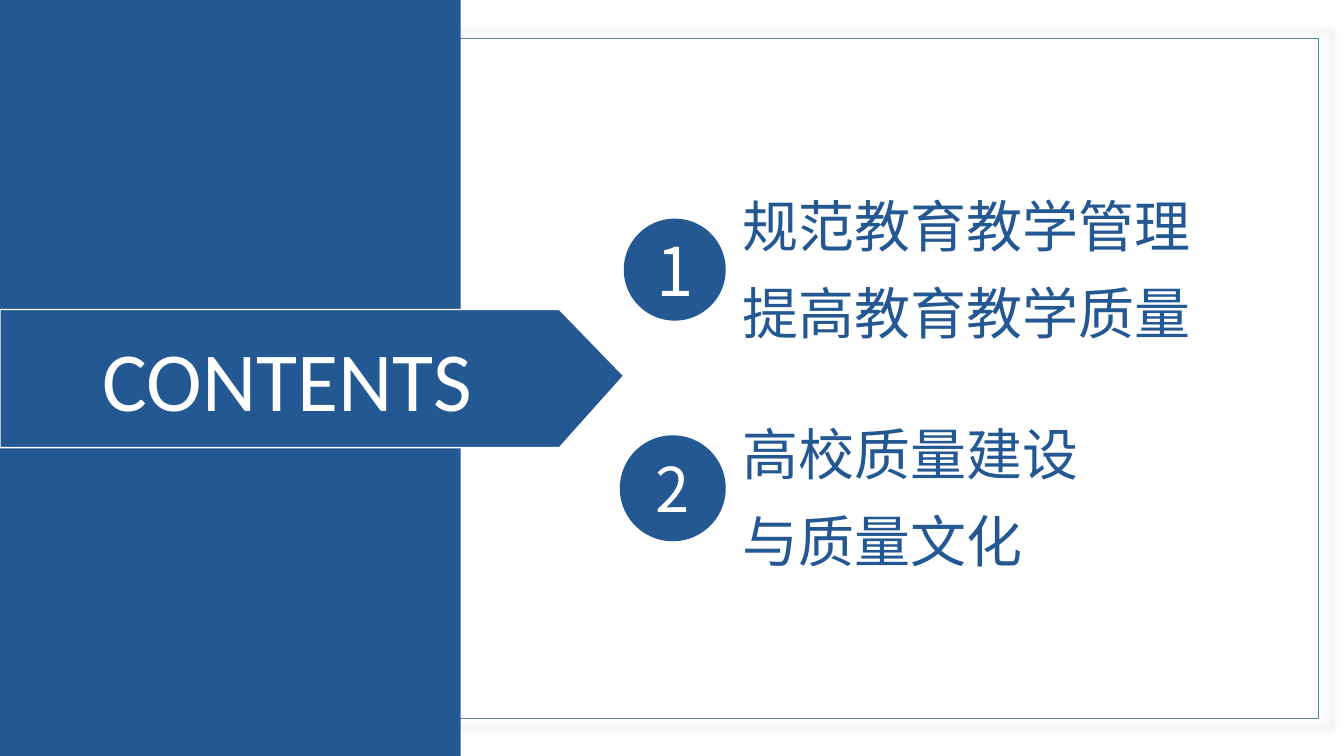
from lxml import etree
from pptx import Presentation
from pptx.dml.color import RGBColor
from pptx.enum.shapes import MSO_SHAPE as Kind
from pptx.enum.text import MSO_ANCHOR as Anchor, PP_ALIGN as Align
from pptx.oxml import parse_xml
from pptx.oxml.ns import qn
from pptx.util import Cm, Pt

BLUE = RGBColor(0x23, 0x58, 0x93)
TEAL = RGBColor(0x51, 0x88, 0x9F)
WHITE = RGBColor(0xFF, 0xFF, 0xFF)
CJK = "Noto Sans CJK SC"
SHADOW = """<a:effectLst xmlns:a="http://schemas.openxmlformats.org/drawingml/2006/main">
<a:outerShdw blurRad="63500" sx="102000" sy="102000" algn="ctr" rotWithShape="0">
<a:srgbClr val="808080"><a:alpha val="40000"/></a:srgbClr></a:outerShdw></a:effectLst>"""


def paint(shape, fill=None, line=None):
    shape.shadow.inherit = False
    if fill is None:
        shape.fill.background()
    else:
        shape.fill.solid()
        shape.fill.fore_color.rgb = fill
    if line is None:
        shape.line.fill.background()
    else:
        shape.line.color.rgb = line
        shape.line.width = Pt(1)
    return shape


def write(shape, text, size, color=WHITE, font=CJK, align=Align.LEFT,
          anchor=Anchor.TOP, wrap=True, space=1.0):
    frame = shape.text_frame
    frame.word_wrap = wrap
    frame.vertical_anchor = anchor
    for i, words in enumerate(text.split("\n")):
        para = frame.add_paragraph() if i else frame.paragraphs[0]
        para.alignment = align
        para.line_spacing = space
        run = para.add_run()
        run.text = words
        run.font.size = Pt(size)
        run.font.name = font
        run.font.color.rgb = color
        east = etree.SubElement(run.font._element, qn("a:ea"))
        east.set("typeface", font)


deck = Presentation()
deck.slide_width, deck.slide_height = Cm(33.87), Cm(19.05)
slide = deck.slides.add_slide(deck.slide_layouts[6])
shapes = slide.shapes

# Frame and side panel
frame = paint(shapes.add_shape(
    Kind.RECTANGLE, Cm(0.64), Cm(0.97), Cm(32.59), Cm(17.14)), line=TEAL)
props = frame._element.spPr
props.replace(props.find(qn("a:effectLst")), parse_xml(SHADOW))
paint(shapes.add_shape(Kind.RECTANGLE, 0, 0, Cm(11.61), deck.slide_height), BLUE)

# Arrow banner with the heading
edge = [(14.1, 7.8), (15.72, 9.47), (14.1, 11.28), (0, 11.28)]
pen = shapes.build_freeform(0, Cm(7.8))
pen.add_line_segments([(Cm(x), Cm(y)) for x, y in edge], close=True)
paint(pen.convert_to_shape(), BLUE, WHITE)
title = paint(shapes.add_shape(
    Kind.RECTANGLE, Cm(2.34), Cm(8.13), Cm(9.8), Cm(2.82)), BLUE)
write(title, "CONTENTS", 60, font="Calibri", wrap=False)

# Numbered topics: disc left, top, width, digit size; text top, width
topics = [
    ("1", 15.72, 5.51, 2.57, 48, 4.19, 12.85, "规范教育教学管理\n提高教育教学质量"),
    ("2", 15.62, 10.97, 2.67, 44, 9.93, 11.84, "高校质量建设\n与质量文化"),
]
for digit, left, top, width, size, y, span, text in topics:
    disc = paint(shapes.add_shape(
        Kind.OVAL, Cm(left), Cm(top), Cm(width), Cm(width)), BLUE)
    write(disc, digit, size, align=Align.CENTER, anchor=Anchor.MIDDLE)
    box = shapes.add_textbox(Cm(18.47), Cm(y), Cm(span), Cm(4.7))
    write(box, text, 40, BLUE, space=1.3)

deck.save("out.pptx")
